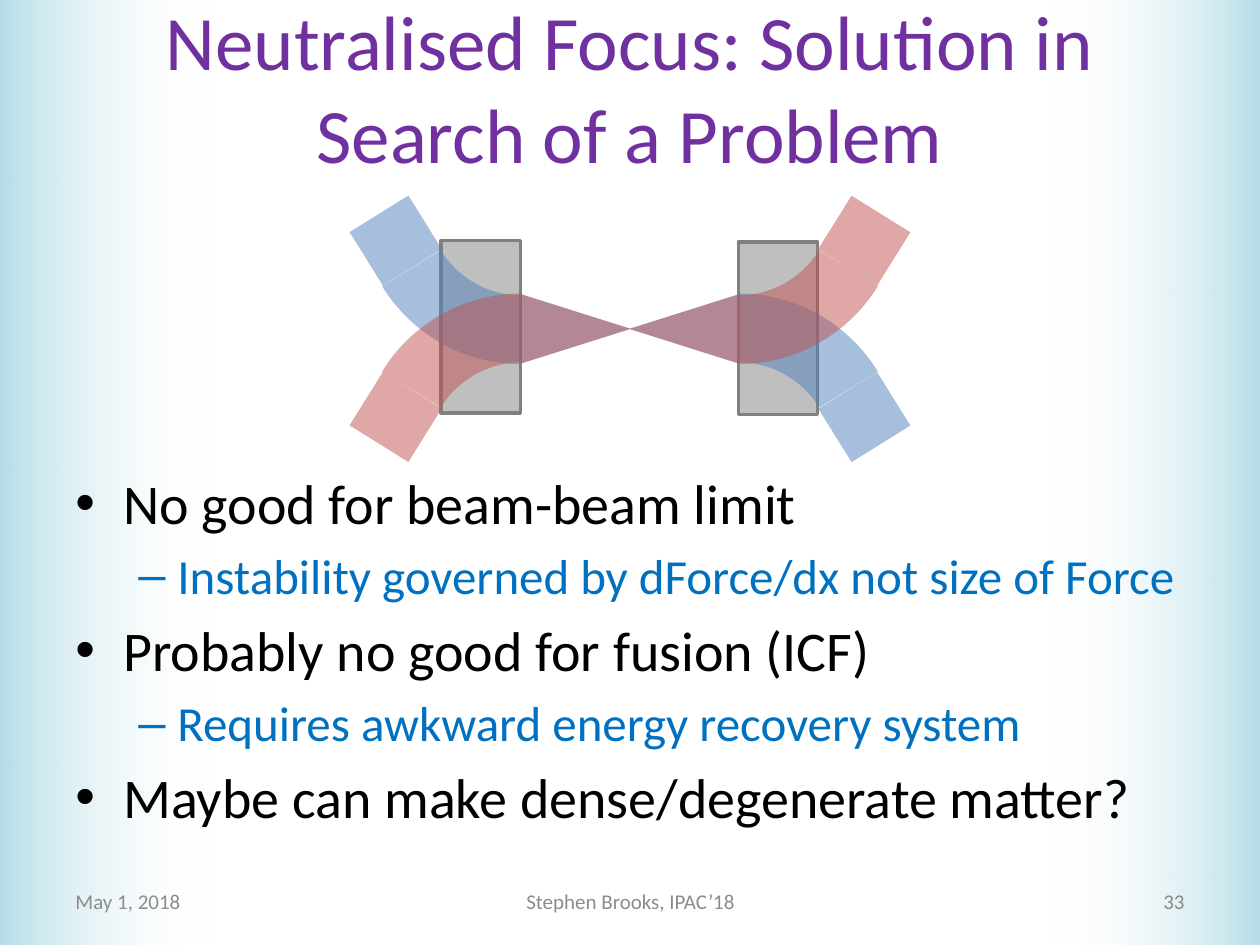
from lxml import etree
from pptx import Presentation
from pptx.dml.color import RGBColor
from pptx.enum.shapes import MSO_SHAPE as SHAPE
from pptx.enum.text import MSO_ANCHOR as ANCHOR, MSO_AUTO_SIZE as AUTO, PP_ALIGN as ALIGN
from pptx.oxml.ns import qn
from pptx.util import Inches, Pt

TITLE = "Neutralised Focus: Solution in Search of a Problem"
BULLETS = [
    (0, "No good for beam-beam limit"),
    (1, "Instability governed by dForce/dx not size of Force"),
    (0, "Probably no good for fusion (ICF)"),
    (1, "Requires awkward energy recovery system"),
    (0, "Maybe can make dense/degenerate matter?"),
]
# bullet, size, colour, left margin, hanging indent
LEVELS = [("•", 32, "000000", 0.38, -0.38), ("–", 28, "0070C0", 0.81, -0.31)]
FOOTERS = [
    ("May 1, 2018", 0.5, 2.33, ALIGN.LEFT, "8C8C8C"),
    ("Stephen Brooks, IPAC’18", 3.42, 3.17, ALIGN.CENTER, "8C8C8C"),
    ("33", 7.17, 2.33, ALIGN.RIGHT, "898989"),
]

FOCUS_X, FOCUS_Y = 5, 2.61
BLUE, RED = "4F81BD", "C0504D"
# shape, offset of centre from focus, size, rotation, for the upper left beam
BEAM_PARTS = [
    (SHAPE.ISOSCELES_TRIANGLE, -0.43, 0, 0.55, 0.87, 90),
    (SHAPE.BLOCK_ARC, -0.86, -1.02, 2.6, 2.6, 270),
    (SHAPE.RECTANGLE, -1.86, -0.7, 0.5, 0.55, 58.1),
]
ARC_ADJUSTMENTS = (108, 143.012, 0.21)
# colour, side (1 left, -1 right), mirrored top to bottom
BEAMS = [(BLUE, 1, False), (RED, 1, True), (BLUE, -1, False), (RED, -1, True)]


def rgb(hex_color):
    return RGBColor.from_string(hex_color)


def add_box(s, kind, x, y, w, h, rotation=0):
    sp = s.shapes.add_shape(kind, Inches(x), Inches(y), Inches(w), Inches(h))
    sp.rotation = rotation
    sp.shadow.inherit = False
    sp.line.fill.background()
    return sp


def set_alpha(sp, percent):
    """Set the opacity of the last colour in the shape's fill."""
    color = sp._element.spPr.findall(".//" + qn("a:srgbClr"))[-1]
    etree.SubElement(color, qn("a:alpha")).set("val", str(percent * 1000))


def add_run(p, text, size, color):
    r = p.add_run()
    r.text = text
    r.font.name = "Calibri"
    r.font.size = Pt(size)
    r.font.color.rgb = rgb(color)


def add_text_frame(s, x, y, w, h, anchor):
    tf = s.shapes.add_textbox(Inches(x), Inches(y), Inches(w), Inches(h)).text_frame
    tf.word_wrap = True
    tf.vertical_anchor = anchor
    return tf


def add_side_strip(s, x, rotation):
    strip = add_box(s, SHAPE.RECTANGLE, x, 0, 1.69, 7.5, rotation)
    strip.fill.gradient()
    strip.fill.gradient_angle = 0
    for stop, color in zip(strip.fill.gradient_stops, ("B7DEE8", "FFFFFF")):
        stop.color.rgb = rgb(color)
    set_alpha(strip, 0)


def add_title(s):
    title = s.shapes.title
    title.left, title.top, title.width, title.height = map(Inches, (0.5, 0.06, 9, 1.25))
    tf = title.text_frame
    tf.auto_size = AUTO.NONE
    tf.vertical_anchor = ANCHOR.MIDDLE
    p = tf.paragraphs[0]
    p.alignment = ALIGN.CENTER
    add_run(p, TITLE, 44, "7030A0")
    # Bring the title in front of the side strips
    s.shapes._spTree.append(title._element)


def add_bullets(s):
    tf = add_text_frame(s, 0.5, 3.67, 9, 3.03, ANCHOR.TOP)
    for i, (level, text) in enumerate(BULLETS):
        bullet, size, color, margin, indent = LEVELS[level]
        p = tf.add_paragraph() if i else tf.paragraphs[0]
        p.level = level
        p.space_before = Pt(size * 0.2)
        add_run(p, text, size, color)
        pPr = p._p.get_or_add_pPr()
        pPr.set("marL", str(Inches(margin)))
        pPr.set("indent", str(Inches(indent)))
        etree.SubElement(pPr, qn("a:buFont")).set("typeface", "Arial")
        etree.SubElement(pPr, qn("a:buChar")).set("char", bullet)


def add_magnet(s, x, y):
    magnet = add_box(s, SHAPE.RECTANGLE, x, y, 0.63, 1.37)
    magnet.fill.solid()
    magnet.fill.fore_color.rgb = rgb("BFBFBF")
    magnet.line.color.rgb = rgb("808080")
    magnet.line.width = Pt(2)


def add_beam(s, color, side, mirrored):
    """Draw one beam; the right side is the left one turned half round the focus."""
    for kind, dx, dy, w, h, rotation in BEAM_PARTS:
        rotation += 0 if side == 1 else 180
        dx, dy = dx * side, dy * side
        if mirrored:
            dy, rotation = -dy, -rotation
        part = add_box(s, kind, FOCUS_X + dx - w / 2, FOCUS_Y + dy - h / 2,
                       w, h, rotation % 360)
        if mirrored:
            part._element.spPr.find(qn("a:xfrm")).set("flipV", "1")
        if kind == SHAPE.BLOCK_ARC:
            for i, value in enumerate(ARC_ADJUSTMENTS):
                part.adjustments[i] = value
        part.fill.solid()
        part.fill.fore_color.rgb = rgb(color)
        set_alpha(part, 50)


def main():
    prs = Presentation()
    prs.slide_width, prs.slide_height = Inches(10), Inches(7.5)
    s = prs.slides.add_slide(prs.slide_layouts[5])
    add_side_strip(s, 8.31, 180)
    add_side_strip(s, 0, 0)
    add_title(s)
    add_bullets(s)
    for text, x, w, align, color in FOOTERS:
        p = add_text_frame(s, x, 6.95, w, 0.4, ANCHOR.MIDDLE).paragraphs[0]
        p.alignment = align
        add_run(p, text, 12, color)
    add_magnet(s, 5.86, 1.92)
    add_magnet(s, 3.5, 1.91)
    for beam in BEAMS:
        add_beam(s, *beam)
    prs.save("out.pptx")


if __name__ == "__main__":
    main()
